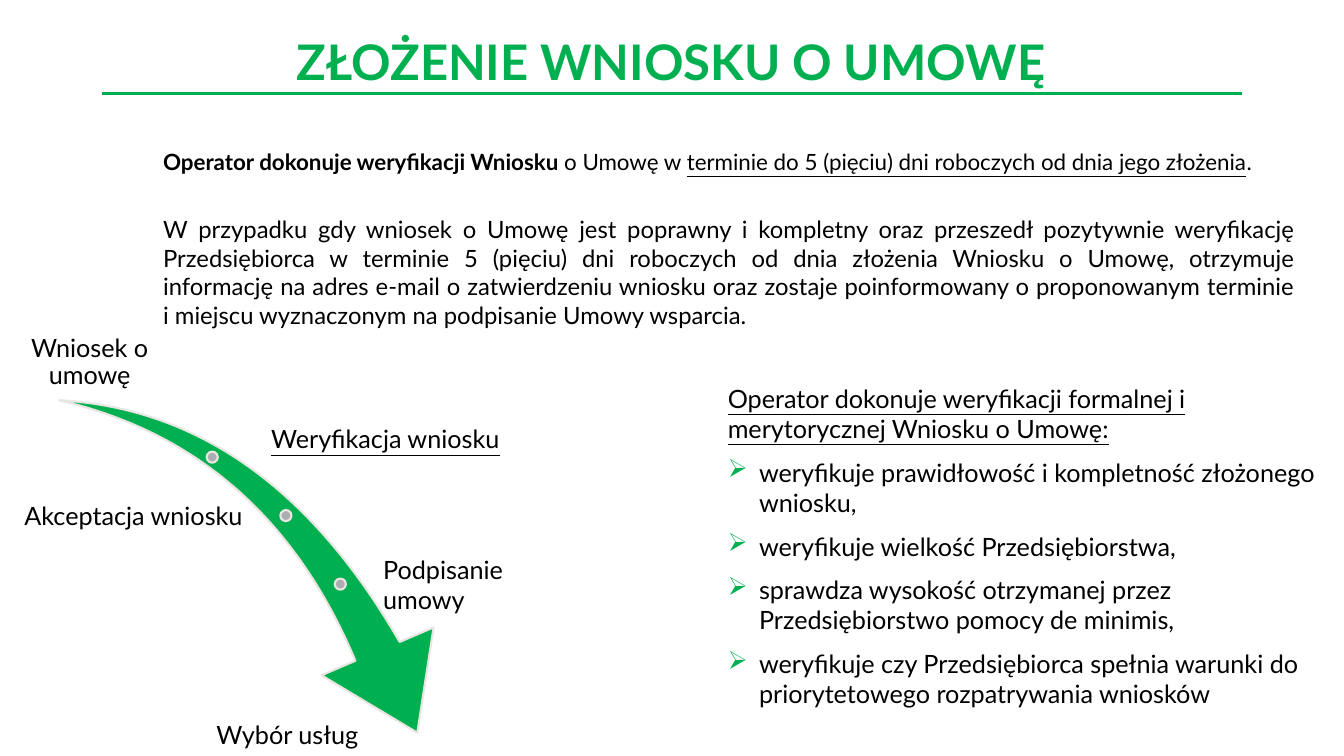
from lxml.etree import SubElement
from pptx import Presentation
from pptx.dml.color import RGBColor
from pptx.enum.shapes import MSO_CONNECTOR, MSO_SHAPE
from pptx.enum.text import MSO_ANCHOR, PP_ALIGN
from pptx.oxml.ns import qn
from pptx.util import Inches, Pt

WIDE, HIGH = Inches(13.33), Inches(7.5)
GREEN, BLACK, PALE, GRAY = "00B050", "000000", "E8E6E2", "ACADB0"
LEFT, MID, RIGHT, JUST = PP_ALIGN.LEFT, PP_ALIGN.CENTER, PP_ALIGN.RIGHT, PP_ALIGN.JUSTIFY
TOP, CORE, BASE = MSO_ANCHOR.TOP, MSO_ANCHOR.MIDDLE, MSO_ANCHOR.BOTTOM


def color(code):
    return RGBColor.from_string(code)


def across(share):
    """Percent of the slide's width."""
    return round(WIDE * share / 100)


def down(share):
    """Percent of the slide's height."""
    return round(HIGH * share / 100)


def area(left, top, width, height):
    return across(left), down(top), across(width), down(height)


def add_run(para, text, size, tone=BLACK, bold=False, under=False):
    run = para.add_run()
    run.text = text
    font = run.font
    font.name, font.size = "Lato", Pt(size)
    font.bold, font.underline = bold, under
    font.color.rgb = color(tone)


def add_box(slide, place, anchor=TOP, inset=None):
    frame = slide.shapes.add_textbox(*area(*place)).text_frame
    frame.word_wrap = True
    frame.vertical_anchor = anchor
    if inset is not None:
        frame.margin_left = frame.margin_right = Inches(inset)
        frame.margin_top = frame.margin_bottom = Inches(inset)
    return frame


def add_label(slide, text, place, align=LEFT, anchor=CORE, under=False, lead=1.0):
    para = add_box(slide, place, anchor, 0.03).paragraphs[0]
    para.alignment, para.line_spacing = align, lead
    add_run(para, text, 18, under=under)


def add_form(slide, kind, place, fill):
    form = slide.shapes.add_shape(kind, *area(*place))
    form.shadow.inherit = False
    form.fill.solid()
    form.fill.fore_color.rgb = color(fill)
    form.line.color.rgb = color(PALE)
    form.line.width = Pt(1.5)
    return form


def add_bullet(para):
    props = para._p.get_or_add_pPr()
    indent = Inches(0.31)
    props.set("marL", str(indent))
    props.set("indent", str(-indent))
    tint = SubElement(props, qn("a:buClr"))
    SubElement(tint, qn("a:srgbClr")).set("val", GREEN)
    SubElement(props, qn("a:buChar")).set("char", "➢")


def add_header(slide):
    para = add_box(slide, (7.58, 0.93, 84.75, 15.33), CORE).paragraphs[0]
    para.alignment, para.line_spacing = MID, 0.9
    add_run(para, "ZŁOŻENIE WNIOSKU O UMOWĘ", 35, GREEN, bold=True)
    rule = slide.shapes.add_connector(
        MSO_CONNECTOR.STRAIGHT, across(7.58), down(12.4), across(92.42), down(12.4))
    rule.line.color.rgb = color(GREEN)
    rule.line.width = Pt(2.25)
    SubElement(rule._element.spPr, qn("a:effectLst"))


def add_intro(slide):
    para = add_box(slide, (11.4, 18.93, 86.65, 26.53)).paragraphs[0]
    para.alignment = JUST
    add_run(para, "Operator dokonuje weryfikacji Wniosku ", 16, bold=True)
    add_run(para, "o Umowę w ", 16)
    add_run(para, "terminie do 5 (pięciu) dni roboczych od dnia jego złożenia", 16, under=True)
    add_run(para, ".", 16)

    para = add_box(slide, (11.4, 27.73, 85.67, 20.13)).paragraphs[0]
    para.alignment = JUST
    add_run(para, "W przypadku gdy wniosek o Umowę jest poprawny i kompletny oraz "
            "przeszedł pozytywnie weryfikację Przedsiębiorca w terminie 5 (pięciu) dni "
            "roboczych od dnia złożenia Wniosku o Umowę, otrzymuje informację na adres "
            "e-mail o zatwierdzeniu wniosku oraz zostaje poinformowany o proponowanym "
            "terminie i miejscu wyznaczonym na podpisanie Umowy wsparcia.", 17)


def add_steps(slide):
    # Curved arrow with its dots
    arrow = add_form(slide, MSO_SHAPE.SWOOSH_ARROW, (3.68, 54.67, 31.36, 38.8), GREEN)
    arrow.adjustments[0], arrow.adjustments[1] = 0.163, 0.314
    arrow.rotation = 73.3
    wide, high = 0.83, 1.47
    for x, y in ((15.79, 60.47), (21.27, 68.2), (25.32, 77.27)):
        add_form(slide, MSO_SHAPE.OVAL, (x - wide / 2, y - high / 2, wide, high), GRAY)

    # Step names
    tall = 10.27
    add_label(slide, "Wniosek o umowę", (1.95, 41.73, 9.45, tall), MID, BASE, lead=0.9)
    add_label(slide, "Weryfikacja wniosku", (19.95, 52.93, 21.53, tall), under=True)
    add_label(slide, "Akceptacja wniosku", (1.58, 63.07, 16.7, tall), RIGHT)
    add_label(slide, "Podpisanie umowy", (28.28, 72.13, 13.2, tall))
    add_label(slide, "Wybór usług", (11.4, 94.8, 19.95, 5.07), MID, TOP)


def add_checks(slide):
    frame = add_box(slide, (53.41, 50, 45.84, 44.93))
    add_run(frame.paragraphs[0], "Operator dokonuje weryfikacji formalnej i "
            "merytorycznej Wniosku o Umowę:", 18, under=True)
    for check in (
        "weryfikuje prawidłowość i kompletność złożonego wniosku,",
        "weryfikuje wielkość Przedsiębiorstwa,",
        "sprawdza wysokość otrzymanej przez Przedsiębiorstwo pomocy de minimis,",
        "weryfikuje czy Przedsiębiorca spełnia warunki do priorytetowego "
        "rozpatrywania wniosków",
    ):
        para = frame.add_paragraph()
        add_bullet(para)
        para.space_before = Pt(9.6)
        add_run(para, check, 18)


def main():
    deck = Presentation()
    deck.slide_width, deck.slide_height = WIDE, HIGH
    slide = deck.slides.add_slide(deck.slide_layouts[6])
    add_header(slide)
    add_intro(slide)
    add_steps(slide)
    add_checks(slide)
    deck.save("out.pptx")


if __name__ == "__main__":
    main()
